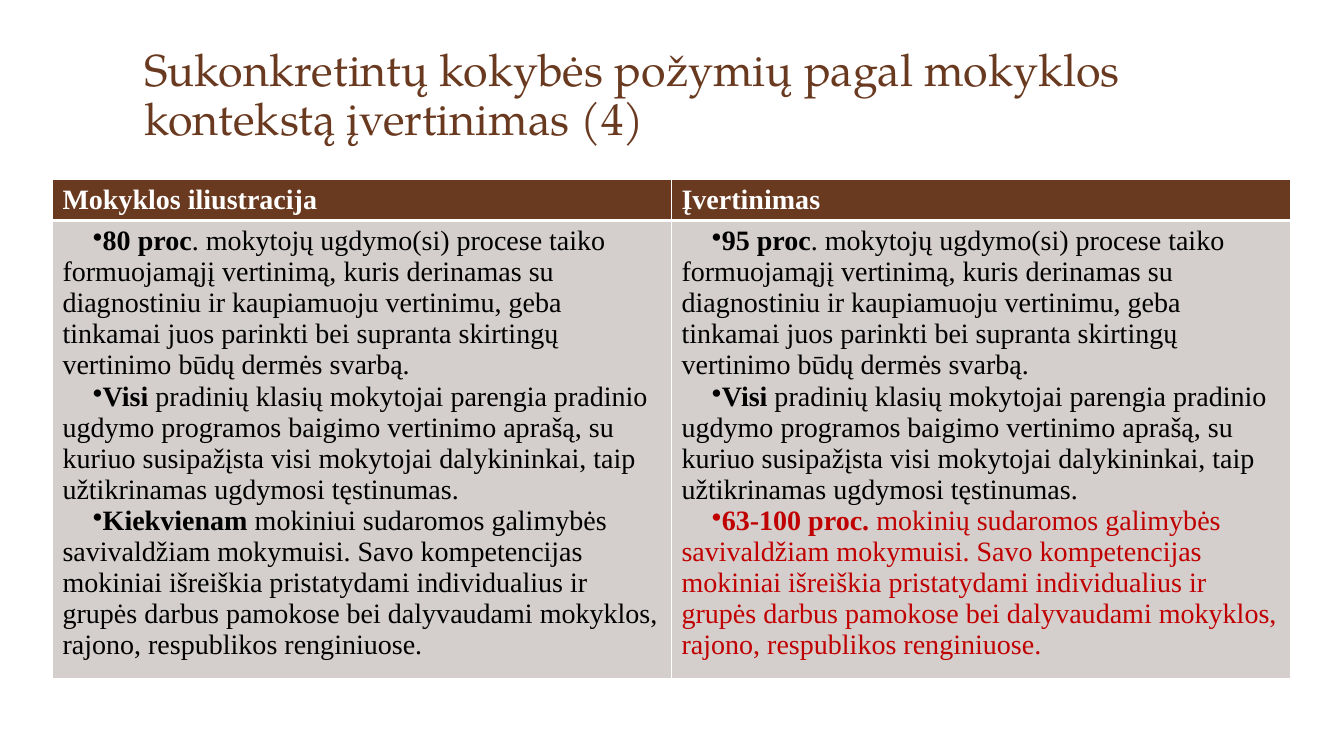
from lxml.etree import SubElement
from pptx import Presentation
from pptx.dml.color import RGBColor
from pptx.enum.text import MSO_ANCHOR, MSO_AUTO_SIZE, PP_ALIGN
from pptx.oxml import parse_xml
from pptx.oxml.ns import nsdecls, qn
from pptx.util import Inches, Pt

BROWN = RGBColor(0x6A, 0x3A, 0x20)
GREY = RGBColor(0xD4, 0xCE, 0xCD)
WHITE = RGBColor(0xFF, 0xFF, 0xFF)
BLACK = RGBColor(0, 0, 0)
RED = RGBColor(0xC0, 0, 0)

TITLE = "Sukonkretintų kokybės požymių pagal mokyklos kontekstą įvertinimas (4)"
HEADERS = ["Mokyklos iliustracija", "Įvertinimas"]
ASSESSMENT = (". mokytojų ugdymo(si) procese taiko formuojamąjį vertinimą, kuris "
              "derinamas su diagnostiniu ir kaupiamuoju vertinimu, geba tinkamai juos "
              "parinkti bei supranta skirtingų vertinimo būdų dermės svarbą.")
PRIMARY = (" pradinių klasių mokytojai parengia pradinio ugdymo programos baigimo "
           "vertinimo aprašą, su kuriuo susipažįsta visi mokytojai dalykininkai, taip "
           "užtikrinamas ugdymosi tęstinumas.")
LEARNING = (" sudaromos galimybės savivaldžiam mokymuisi. Savo kompetencijas mokiniai "
            "išreiškia pristatydami individualius ir grupės darbus pamokose bei "
            "dalyvaudami mokyklos, rajono, respublikos renginiuose.")
COLUMNS = [
    [("80 proc", ASSESSMENT, BLACK), ("Visi", PRIMARY, BLACK),
     ("Kiekvienam", " mokiniui" + LEARNING, BLACK)],
    [("95 proc", ASSESSMENT, BLACK), ("Visi", PRIMARY, BLACK),
     ("63-100 proc. ", "mokinių" + LEARNING, RED)],
]


def add_run(p, text, size=20, font="Times New Roman", color=BLACK, bold=False):
    r = p.add_run()
    r.text = text
    r.font.size = Pt(size)
    r.font.name = font
    r.font.color.rgb = color
    r.font.bold = bold


def add_bullet(p):
    pPr = p._p.get_or_add_pPr()
    pPr.set("marL", "0")
    pPr.set("indent", str(Inches(0.3)))
    SubElement(pPr, qn("a:buChar")).set("char", "•")


def style_cell(cell, fill, top=1, bottom=1):
    tcPr = cell._tc.get_or_add_tcPr()
    for side, width in (("L", 1), ("R", 1), ("T", top), ("B", bottom)):
        tcPr.append(parse_xml(
            f'<a:ln{side} {nsdecls("a")} w="{Pt(width)}"><a:solidFill>'
            f'<a:srgbClr val="{WHITE}"/></a:solidFill></a:ln{side}>'))
    cell.fill.solid()
    cell.fill.fore_color.rgb = fill


def add_title(s):
    sp = s.shapes.title
    sp.left, sp.top = Inches(1.33), Inches(0.21)
    sp.width, sp.height = Inches(10.66), Inches(1.28)
    tf = sp.text_frame
    tf.word_wrap = True
    tf.auto_size = MSO_AUTO_SIZE.NONE
    tf.vertical_anchor = MSO_ANCHOR.BOTTOM
    p = tf.paragraphs[0]
    p.alignment = PP_ALIGN.LEFT
    p.line_spacing = 0.9
    add_run(p, TITLE, size=32, font="TeX Gyre Pagella", color=BROWN)


def add_comparison(s):
    table = s.shapes.add_table(2, 2, Inches(0.52), Inches(1.78),
                               Inches(12.28), Inches(4.92)).table
    table.rows[0].height = Inches(0.38)
    table.rows[1].height = Inches(4.54)
    for col, (header, points) in enumerate(zip(HEADERS, COLUMNS)):
        head, body = table.cell(0, col), table.cell(1, col)
        style_cell(head, BROWN, bottom=3)
        style_cell(body, GREY, top=3)
        add_run(head.text_frame.paragraphs[0], header, color=WHITE, bold=True)
        tf = body.text_frame
        for i, (lead, rest, color) in enumerate(points):
            p = tf.add_paragraph() if i else tf.paragraphs[0]
            add_bullet(p)
            add_run(p, lead, color=color, bold=True)
            add_run(p, rest, color=color)


def main():
    prs = Presentation()
    prs.slide_width, prs.slide_height = Inches(13.33), Inches(7.5)
    s = prs.slides.add_slide(prs.slide_layouts[5])
    add_title(s)
    add_comparison(s)
    prs.save("out.pptx")


if __name__ == "__main__":
    main()
